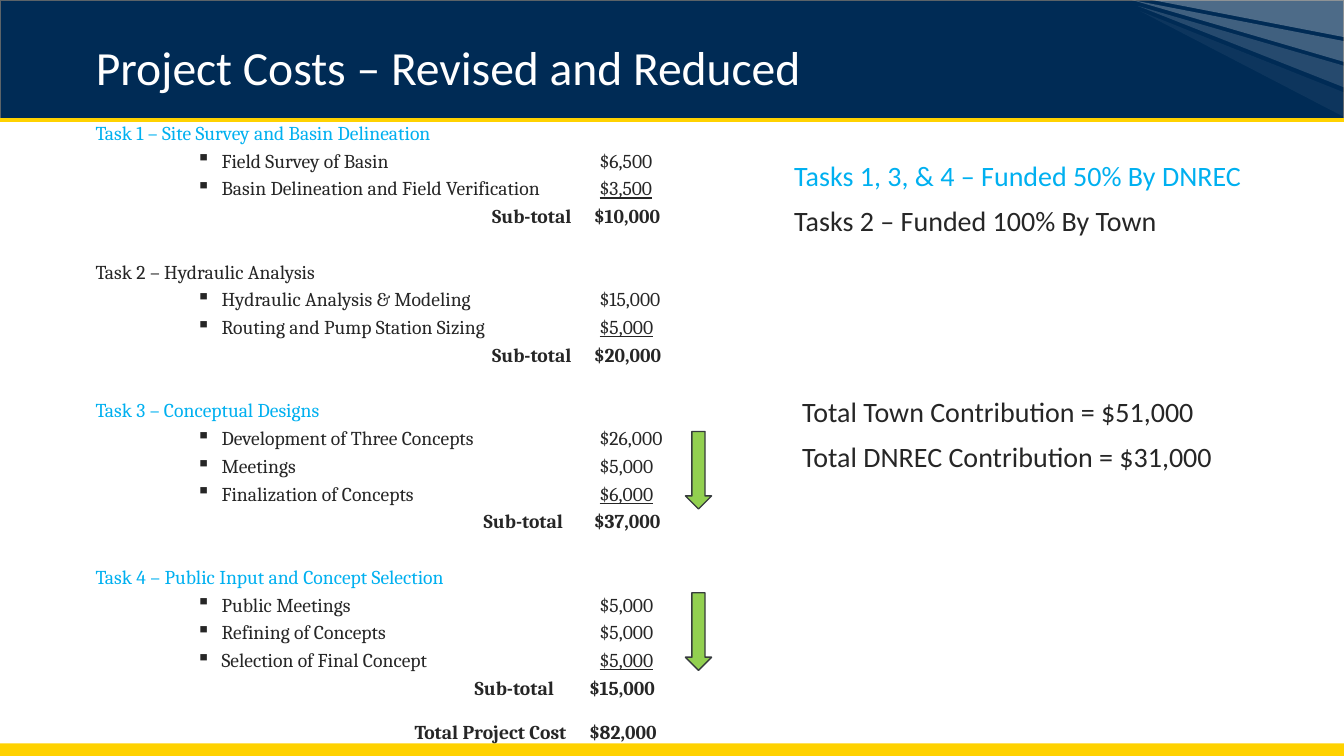
from dataclasses import dataclass

from lxml import etree
from pptx import Presentation
from pptx.dml.color import RGBColor
from pptx.enum.shapes import MSO_CONNECTOR, MSO_SHAPE
from pptx.enum.text import MSO_ANCHOR
from pptx.oxml.ns import qn
from pptx.util import Pt

RECT, ARROW = MSO_SHAPE.RECTANGLE, MSO_SHAPE.DOWN_ARROW
LINE = MSO_CONNECTOR.STRAIGHT
TOP, MIDDLE = MSO_ANCHOR.TOP, MSO_ANCHOR.MIDDLE


@dataclass(frozen=True)
class Theme:
    navy: str = "002B55"
    gold: str = "FFD200"
    white: str = "FFFFFF"
    blue: str = "00B0F0"
    ink: str = "262626"
    green: str = "92D050"
    edge: str = "363B3D"
    rim: str = "5C6368"
    sans: str = "Calibri"
    serif: str = "Cambria"
    head: float = 34
    note: float = 20
    body: float = 14


@dataclass(frozen=True)
class Ray:
    x: float
    y: float
    high: float
    low: float
    alpha: int


@dataclass(frozen=True)
class Sum:
    label: str
    cost: str
    end: float
    start: float


@dataclass(frozen=True)
class Task:
    name: str
    color: str
    items: tuple[tuple[str, str], ...]
    total: Sum


@dataclass(frozen=True)
class Note:
    x: float
    y: float
    lines: tuple[tuple[str, str], ...]


THEME = Theme()
WIDE, HIGH, BAND = 960, 540, 85.7

RAYS = (
    Ray(823, 0, 0, 26.5, 30),
    Ray(814.3, 7.9, 66, 83.5, 5),
    Ray(808.6, 0, 29.4, 44.2, 25),
    Ray(812.9, 4.3, 47, 62.4, 15),
)
TASKS = (
    Task("Task 1 – Site Survey and Basin Delineation", THEME.blue,
         (("Field Survey of Basin", "$6,500"),
          ("Basin Delineation and Field Verification", "$3,500")),
         Sum("Sub-total", "$10,000", 340, 356)),
    Task("Task 2 – Hydraulic Analysis", THEME.ink,
         (("Hydraulic Analysis & Modeling", "$15,000"),
          ("Routing and Pump Station Sizing", "$5,000")),
         Sum("Sub-total", "$20,000", 340, 356)),
    Task("Task 3 – Conceptual Designs", THEME.blue,
         (("Development of Three Concepts", "$26,000"),
          ("Meetings", "$5,000"),
          ("Finalization of Concepts", "$6,000")),
         Sum("Sub-total", "$37,000", 334, 356)),
    Task("Task 4 – Public Input and Concept Selection", THEME.blue,
         (("Public Meetings", "$5,000"),
          ("Refining of Concepts", "$5,000"),
          ("Selection of Final Concept", "$5,000")),
         Sum("Sub-total", "$15,000", 327.5, 352.5)),
)
TOTAL = Sum("Total Project Cost", "$82,000", 336.5, 352.5)
NOTES = (
    Note(560.2, 15.8, (("Tasks 1, 3, & 4 – Funded 50% By DNREC", THEME.blue),
                       ("Tasks 2 – Funded 100% By Town", THEME.ink))),
    Note(565.9, 184.3, (("Total Town Contribution = $51,000", THEME.ink),
                        ("Total DNREC Contribution = $31,000", THEME.ink))),
)


def write(para, text: str, *, size: float = THEME.body, face: str = THEME.serif,
          color: str = THEME.ink, bold: bool = False, under: bool = False) -> None:
    run = para.add_run()
    run.text = text
    font = run.font
    font.size, font.name, font.bold, font.underline = Pt(size), face, bold, under
    font.color.rgb = RGBColor.from_string(color)


def paint(shape, fill: str, line: str | None = None) -> None:
    shape.shadow.inherit = False
    shape.fill.solid()
    shape.fill.fore_color.rgb = RGBColor.from_string(fill)
    if line:
        shape.line.color.rgb = RGBColor.from_string(line)
        shape.line.width = Pt(1)
    else:
        shape.line.fill.background()


def block(shapes, kind, x: float, y: float, w: float, h: float,
          fill: str, line: str | None = None) -> None:
    paint(shapes.add_shape(kind, Pt(x), Pt(y), Pt(w), Pt(h)), fill, line)


def beam(shapes, ray: Ray) -> None:
    form = shapes.build_freeform(Pt(ray.x), Pt(ray.y), scale=1.0)
    form.add_line_segments([(Pt(WIDE), Pt(ray.high)), (Pt(WIDE), Pt(ray.low))], close=True)
    shape = form.convert_to_shape()
    paint(shape, THEME.white)
    tint = shape.element.spPr.find(qn("a:solidFill"))[0]
    etree.SubElement(tint, qn("a:alpha"), val=str(ray.alpha * 1000))


def frame(shapes, x: float, y: float, w: float, h: float, anchor):
    text = shapes.add_textbox(Pt(x), Pt(y), Pt(w), Pt(h)).text_frame
    text.word_wrap = True
    text.vertical_anchor = anchor
    return text


def row(text, before: float = 0, after: float = 3):
    para = text.add_paragraph() if text.paragraphs[0].runs else text.paragraphs[0]
    para.space_before, para.space_after = Pt(before), Pt(after)
    return para


def stops(para, *tabs: tuple[float, str]) -> None:
    held = etree.SubElement(para._p.get_or_add_pPr(), qn("a:tabLst"))
    for pos, side in tabs:
        etree.SubElement(held, qn("a:tab"), pos=str(Pt(pos)), algn=side)


def bullet(para) -> None:
    props = para._p.get_or_add_pPr()
    props.set("marL", str(Pt(90)))
    props.set("indent", str(Pt(-18)))
    etree.SubElement(props, qn("a:buChar"), char="▪")
    stops(para, (360, "l"))


def tally(para, total: Sum) -> None:
    stops(para, (total.end, "r"), (total.start, "l"))
    write(para, f"\t{total.label}\t{total.cost}", bold=True)


def costs(shapes) -> None:
    text = frame(shapes, 61.2, 82.8, 482.4, 456.5, TOP)
    for task in TASKS:
        write(row(text, 0 if task is TASKS[0] else 19.8), task.name, color=task.color)
        for item in task.items:
            name, cost = item
            para = row(text)
            bullet(para)
            write(para, f"{name}\t")
            write(para, cost, under=item is task.items[-1])
        tally(row(text), task.total)
    tally(row(text, 12, 12), TOTAL)


def remark(shapes, note: Note) -> None:
    text = frame(shapes, note.x, note.y, 392, 254.2, MIDDLE)
    for index, (line, color) in enumerate(note.lines):
        para = row(text, 10 if index else 0, 0)
        para.line_spacing = 0.9
        write(para, line, size=THEME.note, face=THEME.sans, color=color)


def banner(shapes) -> None:
    block(shapes, RECT, 0, 0, WIDE, BAND, THEME.navy, THEME.rim)
    for ray in RAYS:
        beam(shapes, ray)
    block(shapes, RECT, 0, 531, WIDE, 9, THEME.gold)
    rule = shapes.add_connector(LINE, 0, Pt(BAND), Pt(WIDE), Pt(BAND))
    rule.line.color.rgb = RGBColor.from_string(THEME.gold)
    rule.line.width = Pt(3)
    etree.SubElement(rule.element.spPr, qn("a:effectLst"))


def heading(shapes) -> None:
    title = shapes.title
    title.element.getparent().append(title.element)
    title.left, title.top, title.width, title.height = Pt(61.2), Pt(28), Pt(741), Pt(44.6)
    title.text_frame.vertical_anchor = MIDDLE
    para = title.text_frame.paragraphs[0]
    props = para._p.get_or_add_pPr()
    props.set("algn", "l")
    para.line_spacing = Pt(35)
    write(para, "Project Costs – Revised and Reduced",
          size=THEME.head, face=THEME.sans, color=THEME.white)


def main() -> None:
    deck = Presentation()
    deck.slide_width, deck.slide_height = Pt(WIDE), Pt(HIGH)
    shapes = deck.slides.add_slide(deck.slide_layouts[5]).shapes
    banner(shapes)
    heading(shapes)
    costs(shapes)
    for note in NOTES:
        remark(shapes, note)
    for y in (308.2, 423.4):
        block(shapes, ARROW, 489.6, y, 18.7, 55.4, THEME.green, THEME.edge)
    deck.save("out.pptx")


if __name__ == "__main__":
    main()
